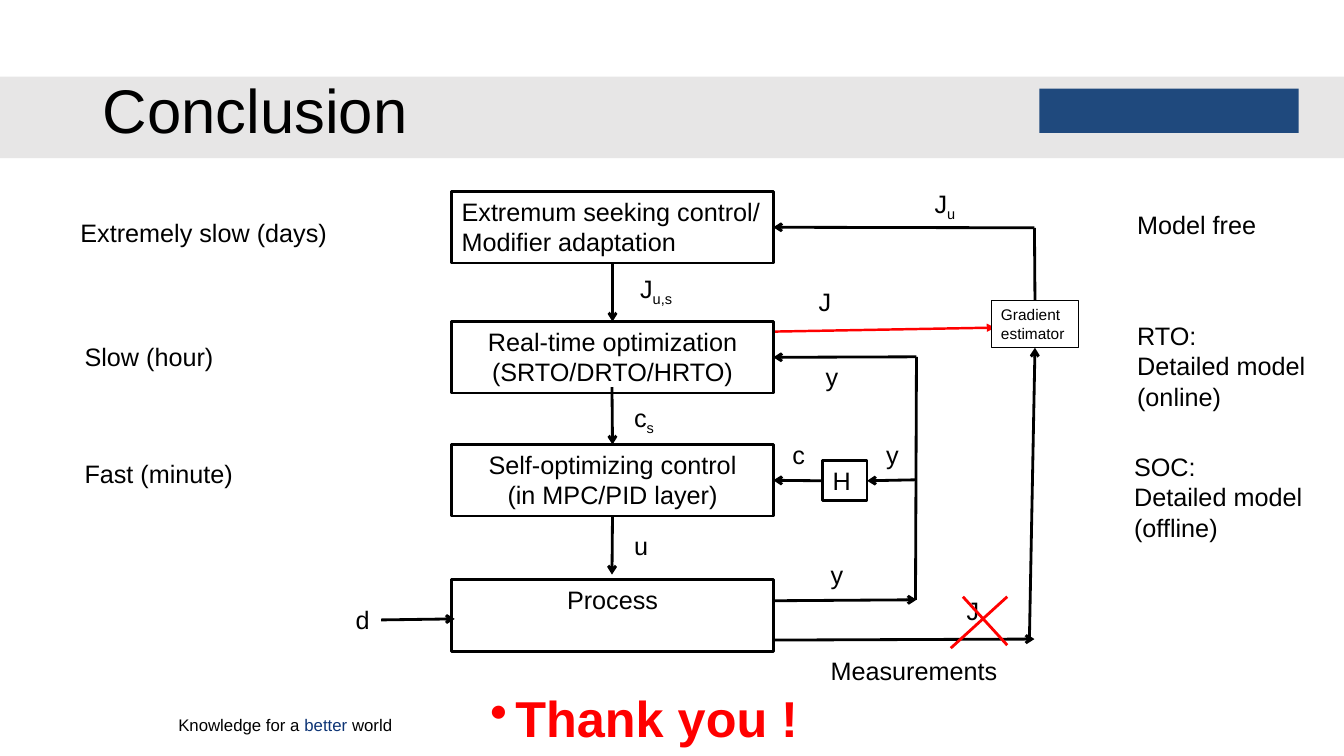
import pptx
import pptx.dml.color
import pptx.enum.shapes
import pptx.enum.text
import pptx.oxml.ns
import pptx.util
from lxml import etree

PX = 9144
SLIDE = (1333, 750)
FONT = "Arial"
COLOURS = {
    "black": "000000", "white": "FFFFFF", "red": "FF0000",
    "band": "E7E6E6", "navy": "0D3475", "blue": "1F497D",
}

BAND = (0, 76, 1333, 81)
BADGE = (1031, 88, 257, 44)
TITLE = (92, 40, 900, 145, "Conclusion")
TAGLINE = (167, 704, 246, 30, [("Knowledge for a ", "black"), ("better ", "navy"), ("world", "black")])
CLOSING = (214, 684, 850, 60, "Thank you !")

LAYER_LEFT, LAYER_WIDTH, LAYER_HEIGHT = 448, 319, 71
LAYERS = [
    ("seeking", 190, "left", ["Extremum seeking control/", "Modifier adaptation"]),
    ("optimizer", 319, "center", ["Real-time optimization", "(SRTO/DRTO/HRTO)"]),
    ("control", 441, "center", ["Self-optimizing control", "(in MPC/PID layer)"]),
    ("process", 575, "center", ["Process"]),
]
SMALL_BOXES = [
    ("selection", (816, 457, 44, 40), "H", 18, 2),
    ("gradient", (983, 298, 87, 47), "Gradient estimator", 11, 0.75),
]

LABELS = [
    (343, 595, 34, "d", ""), (619, 521, 34, "u", ""), (619, 394, 41, "c", "s"),
    (625, 266, 55, "J", "u,s"), (949, 586, 33, "J", ""), (802, 279, 33, "J", ""),
    (917, 182, 42, "J", "u"), (814, 550, 33, "y", ""), (809, 354, 33, "y", ""),
    (869, 431, 33, "y", ""), (776, 431, 33, "c", ""),
    (814, 645, 187, "Measurements", ""),
    (70, 211, 267, "Extremely slow (days)", ""),
    (74, 334, 149, "Slow (hour)", ""),
    (74, 450, 169, "Fast (minute)", ""),
    (1118, 203, 139, "Model free", ""),
    (1118, 313, 196, "RTO:\nDetailed model\n(online)", ""),
    (1115, 443, 196, "SOC:\nDetailed model\n(offline)", ""),
]

TOP, LEFT, BOTTOM, RIGHT = range(4)
COST_FEED = ((767, 329), (987, 325), "red", 1.75, "triangle")
LINKS = [
    (("seeking", BOTTOM), ("optimizer", TOP), "black", 2, "arrow"),
    ((607, 384), ("control", TOP), "black", 2, "arrow"),
    (("control", BOTTOM), (607, 570), "black", 2, "arrow"),
    ((378, 615), (451, 614), "black", 2, "arrow"),
    ((767, 596), (909, 595), "black", 2, "arrow"),
    ((767, 635), (1026, 634), "black", 2, "arrow"),
    (("selection", LEFT), ("control", RIGHT), "black", 2, "arrow"),
    ((909, 476), ("selection", RIGHT), "black", 2, "arrow"),
    ((908, 595), (909, 354), "black", 2, None),
    ((909, 354), ("optimizer", RIGHT), "black", 2, "arrow"),
    ((1021, 634), ("gradient", BOTTOM), "black", 2, "arrow"),
    (("gradient", TOP), (1026, 226), "black", 2, None),
    ((1026, 226), ("seeking", RIGHT), "black", 2, "arrow"),
    ((943, 643), (999, 592), "red", 2, None),
    ((999, 640), (955, 592), "red", 2, None),
]

ALIGN = {"left": pptx.enum.text.PP_ALIGN.LEFT, "center": pptx.enum.text.PP_ALIGN.CENTER}
ANCHOR = pptx.enum.text.MSO_ANCHOR

deck = pptx.Presentation()
deck.slide_width, deck.slide_height = (side * PX for side in SLIDE)
page = deck.slides.add_slide(deck.slide_layouts[6])
boxes = {}


def colour(name):
    return pptx.dml.color.RGBColor.from_string(COLOURS[name])


def emu(*lengths):
    return [length * PX for length in lengths]


def style(font, size, ink="black", bold=False):
    font.name, font.size, font.bold = FONT, pptx.util.Pt(size), bold
    font.color.rgb = colour(ink)


def write(frame, lines, size, align="left"):
    for index, line in enumerate(lines):
        para = frame.paragraphs[0] if index == 0 else frame.add_paragraph()
        para.text = line
        para.alignment = ALIGN[align]
        style(para.font, size)


def add_rectangle(area, fill=None, width=None):
    box = page.shapes.add_shape(pptx.enum.shapes.MSO_SHAPE.RECTANGLE, *emu(*area))
    box.shadow.inherit = False
    if fill:
        box.fill.solid()
        box.fill.fore_color.rgb = colour(fill)
    else:
        box.fill.background()
    if width:
        box.line.color.rgb = colour("black")
        box.line.width = pptx.util.Pt(width)
    else:
        box.line.fill.background()
    box.text_frame.word_wrap = True
    box.text_frame.vertical_anchor = ANCHOR.TOP
    return box


def add_text(area, wrap=False, anchor=ANCHOR.TOP):
    frame = page.shapes.add_textbox(*emu(*area)).text_frame
    frame.word_wrap = wrap
    frame.vertical_anchor = anchor
    return frame


def add_link(start, end, ink, width, arrow):
    joins = [isinstance(point[0], str) for point in (start, end)]
    first, last = [(0, 0) if joined else point for joined, point in zip(joins, (start, end))]
    link = page.shapes.add_connector(pptx.enum.shapes.MSO_CONNECTOR.STRAIGHT, *emu(*first, *last))
    if joins[0]:
        link.begin_connect(boxes[start[0]], start[1])
    if joins[1]:
        link.end_connect(boxes[end[0]], end[1])
    link.line.color.rgb = colour(ink)
    link.line.width = pptx.util.Pt(width)
    if arrow:
        etree.SubElement(link.line._get_or_add_ln(), pptx.oxml.ns.qn("a:tailEnd"), type=arrow)
    etree.SubElement(link._element.spPr, pptx.oxml.ns.qn("a:effectLst"))


add_rectangle(BAND, "band")
add_rectangle(BADGE, "blue")

frame = add_text(TITLE[:4], True, ANCHOR.MIDDLE)
write(frame, [TITLE[4]], 44)
frame.paragraphs[0].line_spacing = 0.9

para = add_text(TAGLINE[:4], True).paragraphs[0]
for words, ink in TAGLINE[4]:
    span = para.add_run()
    span.text = words
    style(span.font, 12, ink)

add_link(*COST_FEED)

for name, top, align, lines in LAYERS:
    boxes[name] = add_rectangle((LAYER_LEFT, top, LAYER_WIDTH, LAYER_HEIGHT), None, 2)
    write(boxes[name].text_frame, lines, 18, align)
for name, area, words, size, width in SMALL_BOXES:
    boxes[name] = add_rectangle(area, "white", width)
    write(boxes[name].text_frame, [words], size)

for left, top, width, words, subscript in LABELS:
    lines = words.split("\n")
    frame = add_text((left, top, width, 10 + 30 * len(lines)))
    write(frame, lines, 18)
    if subscript:
        span = frame.paragraphs[0].add_run()
        span.text = subscript
        span._r.get_or_add_rPr().set("baseline", "-25000")

for link in LINKS:
    add_link(*link)

para = add_text(CLOSING[:4], True).paragraphs[0]
para.text = CLOSING[4]
para.alignment = ALIGN["center"]
para.line_spacing = 0.9
properties = para._p.get_or_add_pPr()
properties.set("marL", str(25 * PX))
properties.set("indent", str(-25 * PX))
etree.SubElement(properties, pptx.oxml.ns.qn("a:buChar"), char="•")
style(para.font, 36, "red", True)

deck.save("out.pptx")
